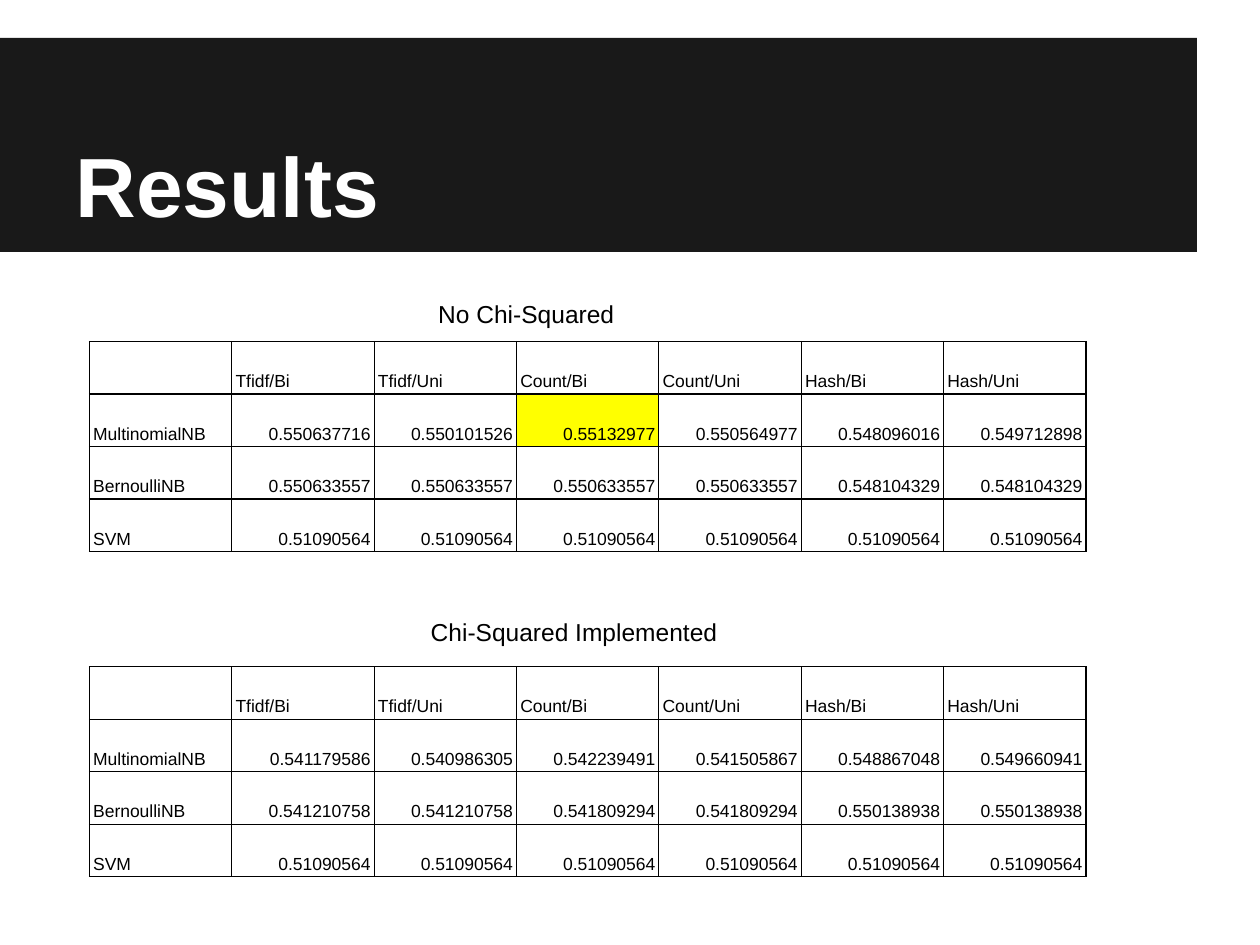
from dataclasses import dataclass

from lxml.etree import SubElement
from pptx import Presentation
from pptx.dml.color import RGBColor as Color
from pptx.enum.shapes import MSO_SHAPE as Preset
from pptx.enum.text import MSO_ANCHOR as Anchor, MSO_AUTO_SIZE as AutoSize, PP_ALIGN as Align
from pptx.oxml.ns import qn
from pptx.util import Inches, Pt


@dataclass(frozen=True)
class Theme:
    font: str = "Arial"
    band: str = "191919"
    paper: str = "FFFFFF"
    ink: str = "000000"
    highlight: str = "FFFF00"
    title_size: int = 48
    caption_size: int = 14
    cell_size: int = 10
    border: float = 0.75


THEME = Theme()
COLUMN, ROW = 1.13, 0.417
FEATURES = ["Tfidf/Bi", "Tfidf/Uni", "Count/Bi", "Count/Uni", "Hash/Bi", "Hash/Uni"]
SVM_SCORES = ["0.51090564"] * len(FEATURES)
PLAIN_SCORES = {
    "MultinomialNB": ["0.550637716", "0.550101526", "0.55132977",
                      "0.550564977", "0.548096016", "0.549712898"],
    "BernoulliNB": ["0.550633557"] * 4 + ["0.548104329"] * 2,
    "SVM": SVM_SCORES,
}
CHI_SQUARED_SCORES = {
    "MultinomialNB": ["0.541179586", "0.540986305", "0.542239491",
                      "0.541505867", "0.548867048", "0.549660941"],
    "BernoulliNB": ["0.541210758"] * 2 + ["0.541809294"] * 2 + ["0.550138938"] * 2,
    "SVM": SVM_SCORES,
}


def add_text(paragraph, text, size, color, bold=False):
    run = paragraph.add_run()
    run.text = text
    run.font.name = THEME.font
    run.font.size = Pt(size)
    run.font.bold = bold
    run.font.color.rgb = Color.from_string(color)


def set_margins(target, horizontal, vertical):
    target.margin_left = target.margin_right = Inches(horizontal)
    target.margin_top = target.margin_bottom = Inches(vertical)


def add_header(slide, left, top, width, height, text):
    band = slide.shapes.add_shape(
        Preset.RECTANGLE, Inches(left), Inches(top), Inches(width), Inches(height))
    band.shadow.inherit = False
    band.fill.solid()
    band.fill.fore_color.rgb = Color.from_string(THEME.band)
    band.line.fill.background()

    title = slide.shapes.title
    band.element.addnext(title.element)
    title.left, title.top = Inches(left + 0.5), Inches(top)
    title.width, title.height = Inches(width - 0.5), Inches(height - 0.04)
    frame = title.text_frame
    frame.auto_size = AutoSize.NONE
    frame.vertical_anchor = Anchor.BOTTOM
    set_margins(frame, 0.1, 0.1)
    paragraph = frame.paragraphs[0]
    paragraph.alignment = Align.LEFT
    add_text(paragraph, text, THEME.title_size, THEME.paper, bold=True)


def add_caption(slide, left, top, width, height, text):
    box = slide.shapes.add_textbox(Inches(left), Inches(top), Inches(width), Inches(height))
    frame = box.text_frame
    frame.word_wrap = True
    set_margins(frame, 0.1, 0.1)
    add_text(frame.paragraphs[0], text, THEME.caption_size, THEME.ink)


def add_borders(cell):
    properties = cell._tc.get_or_add_tcPr()
    for side in ("a:lnL", "a:lnR", "a:lnT", "a:lnB"):
        line = SubElement(properties, qn(side), w=str(Pt(THEME.border)))
        fill = SubElement(line, qn("a:solidFill"))
        SubElement(fill, qn("a:srgbClr"), val=THEME.ink)


def format_cell(cell, text, is_score, color):
    add_borders(cell)
    cell.fill.solid()
    cell.fill.fore_color.rgb = Color.from_string(color)
    cell.vertical_anchor = Anchor.BOTTOM
    set_margins(cell, 0.03, 0.02)
    paragraph = cell.text_frame.paragraphs[0]
    paragraph.line_spacing = 1.15
    paragraph.alignment = Align.RIGHT if is_score else Align.LEFT
    if text:
        add_text(paragraph, text, THEME.cell_size, THEME.ink)


def add_score_table(slide, left, top, scores, best=None):
    """Scores by classifier and feature; best is the (row, column) to highlight."""
    rows = [["", *FEATURES]] + [[name, *values] for name, values in scores.items()]
    row_count, column_count = len(rows), len(rows[0])
    table = slide.shapes.add_table(
        row_count, column_count, Inches(left), Inches(top),
        Inches(COLUMN * column_count), Inches(ROW * row_count)).table
    table.first_row = table.horz_banding = False
    for r, row in enumerate(rows):
        for c, text in enumerate(row):
            color = THEME.highlight if (r, c) == best else THEME.paper
            format_cell(table.cell(r, c), text, r > 0 and c > 0, color)


def main():
    presentation = Presentation()
    presentation.slide_width, presentation.slide_height = Inches(10), Inches(7.5)
    slide = presentation.slides.add_slide(presentation.slide_layouts[5])
    add_header(slide, 0, 0.3, 9.5, 1.7, "Results")
    add_score_table(slide, 0.71, 2.71, PLAIN_SCORES, best=(1, 3))
    add_caption(slide, 3.38, 2.27, 3.24, 0.59, "No Chi-Squared")
    add_score_table(slide, 0.71, 5.29, CHI_SQUARED_SCORES)
    add_caption(slide, 3.32, 4.8, 2.98, 0.42, "Chi-Squared Implemented")
    presentation.save("out.pptx")


if __name__ == "__main__":
    main()
